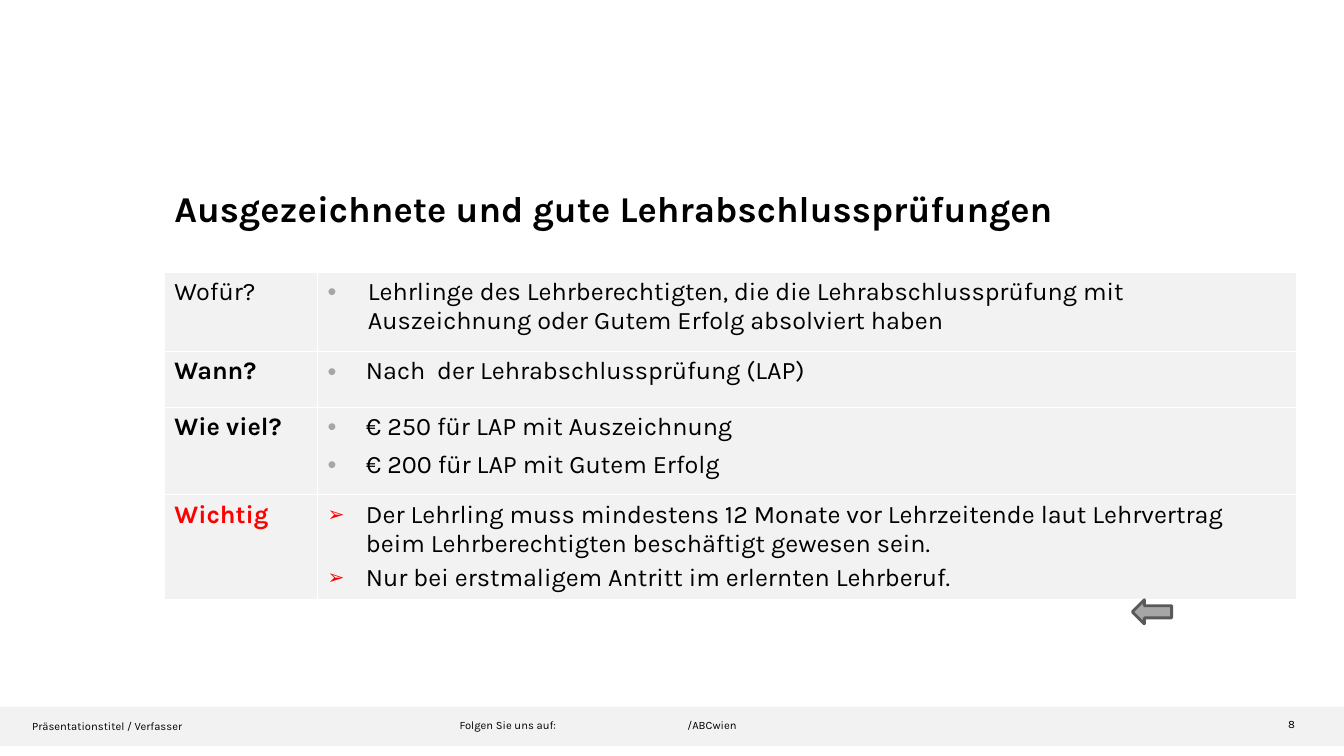
from lxml import etree
from pptx import Presentation
from pptx.dml.color import RGBColor
from pptx.enum.shapes import MSO_SHAPE
from pptx.enum.text import MSO_ANCHOR, PP_ALIGN
from pptx.oxml.ns import qn
from pptx.util import Inches, Pt

RECTANGLE = MSO_SHAPE.RECTANGLE
LEFT_ARROW = MSO_SHAPE.LEFT_ARROW
BOTTOM = MSO_ANCHOR.BOTTOM
LEFT, CENTER = PP_ALIGN.LEFT, PP_ALIGN.CENTER

BLACK, WHITE, RED = "000000", "FFFFFF", "FF0000"
PALE, GREY, DARK_GREY = "F2F2F2", "A6A6A6", "595959"

# label, label colour, label bold, row height, bullet style, entries
DOT = {"char": "•", "color": GREY, "size": 100}
ARROWHEAD = {"char": "➢", "color": RED, "size": 80}
ROWS = [
    ("Wofür?", BLACK, False, 0.79, {**DOT, "indent": 0.4, "before": 0, "after": 0}, [
        "Lehrlinge des Lehrberechtigten, die die Lehrabschlussprüfung mit "
        "Auszeichnung oder Gutem Erfolg absolviert haben"]),
    ("Wann?", BLACK, True, 0.55, {**DOT, "indent": 0.38, "before": 0, "after": 0}, [
        "Nach  der Lehrabschlussprüfung (LAP)"]),
    ("Wie viel?", BLACK, True, 0.87, {**DOT, "indent": 0.38, "before": 3, "after": 3}, [
        "€ 250 für LAP mit Auszeichnung",
        "€ 200 für LAP mit Gutem Erfolg"]),
    ("Wichtig", RED, True, 1.02, {**ARROWHEAD, "indent": 0.38, "before": 3, "after": 0}, [
        "Der Lehrling muss mindestens 12 Monate vor Lehrzeitende laut Lehrvertrag "
        "beim Lehrberechtigten beschäftigt gewesen sein.",
        "Nur bei erstmaligem Antritt im erlernten Lehrberuf."]),
]
COLUMN_WIDTHS = (1.52, 9.71)


def rgb(color):
    return RGBColor.from_string(color)


def add_bullet(para, style):
    """Give a paragraph its bullet and hanging indent."""
    properties = para._p.get_or_add_pPr()
    indent = Inches(style["indent"])
    properties.set("marL", str(indent))
    properties.set("indent", str(-indent))
    bullet_color = etree.SubElement(properties, qn("a:buClr"))
    etree.SubElement(bullet_color, qn("a:srgbClr"), val=style["color"])
    etree.SubElement(properties, qn("a:buSzPct"), val=str(style["size"] * 1000))
    etree.SubElement(properties, qn("a:buFont"), typeface="Arial")
    etree.SubElement(properties, qn("a:buChar"), char=style["char"])


def add_borders(cell, color, width):
    properties = cell._tc.get_or_add_tcPr()
    for side in ("lnL", "lnR", "lnT", "lnB"):
        line = etree.SubElement(properties, qn(f"a:{side}"), w=str(Pt(width)))
        fill = etree.SubElement(line, qn("a:solidFill"))
        etree.SubElement(fill, qn("a:srgbClr"), val=color)


class SlideBuilder:
    font = "Karla"

    def __init__(self, page):
        self.page = page

    def span(self, para, text, size, color=BLACK, bold=False):
        run = para.add_run()
        run.text = text
        run.font.name = self.font
        run.font.size = Pt(size)
        run.font.bold = bold
        run.font.color.rgb = rgb(color)

    def title(self, text, left, top, width, height):
        box = self.page.shapes.title
        box.left, box.top = Inches(left), Inches(top)
        box.width, box.height = Inches(width), Inches(height)
        box.text_frame.vertical_anchor = BOTTOM
        para = box.text_frame.paragraphs[0]
        para.alignment = LEFT
        self.span(para, text, 26, bold=True)

    def footer_text(self, text, left, top, width, align=LEFT):
        box = self.page.shapes.add_textbox(
            Inches(left), Inches(top), Inches(width), Inches(0.24))
        box.text_frame.word_wrap = True
        para = box.text_frame.paragraphs[0]
        para.alignment = align
        self.span(para, text, 8)

    def shape(self, kind, left, top, width, height, fill, line=None):
        shape = self.page.shapes.add_shape(
            kind, Inches(left), Inches(top), Inches(width), Inches(height))
        shape.shadow.inherit = False
        shape.fill.solid()
        shape.fill.fore_color.rgb = rgb(fill)
        if line:
            shape.line.color.rgb = rgb(line)
            shape.line.width = Pt(2)
        else:
            shape.line.fill.background()

    def bullets(self, frame, entries, style):
        for index, entry in enumerate(entries):
            para = frame.add_paragraph() if index else frame.paragraphs[0]
            add_bullet(para, style)
            if index:
                para.space_before = Pt(style["before"])
            para.space_after = Pt(style["after"])
            self.span(para, entry, 18)

    def table(self, rows, left, top):
        height = sum(row[3] for row in rows)
        table = self.page.shapes.add_table(
            len(rows), len(COLUMN_WIDTHS), Inches(left), Inches(top),
            Inches(sum(COLUMN_WIDTHS)), Inches(height)).table
        table.first_row = table.horz_banding = False
        for column, width in zip(table.columns, COLUMN_WIDTHS):
            column.width = Inches(width)
        for row, (label, color, bold, row_height, style, entries) in zip(table.rows, rows):
            row.height = Inches(row_height)
            label_cell, entry_cell = row.cells
            for cell in (label_cell, entry_cell):
                add_borders(cell, WHITE, 1)
                cell.fill.solid()
                cell.fill.fore_color.rgb = rgb(PALE)
            self.span(label_cell.text_frame.paragraphs[0], label, 18, color, bold)
            self.bullets(entry_cell.text_frame, entries, style)


def main():
    deck = Presentation()
    deck.slide_width, deck.slide_height = Inches(13.33), Inches(7.5)
    builder = SlideBuilder(deck.slides.add_slide(deck.slide_layouts[5]))

    builder.shape(RECTANGLE, 0, 7.01, 13.33, 0.39, PALE)
    builder.footer_text("Präsentationstitel / Verfasser", 0.22, 7.09, 2.73)
    builder.footer_text("Folgen Sie uns auf:", 4.46, 7.08, 1.6)
    builder.footer_text("/ABCwien", 6.72, 7.08, 1.6)
    builder.footer_text("8", 12.41, 7.07, 0.8, CENTER)

    builder.title("Ausgezeichnete und gute Lehrabschlussprüfungen", 1.63, 1.34, 11.23, 0.99)
    builder.table(ROWS, 1.63, 2.7)
    builder.shape(LEFT_ARROW, 11.23, 5.95, 0.39, 0.24, GREY, DARK_GREY)

    deck.save("out.pptx")


if __name__ == "__main__":
    main()
